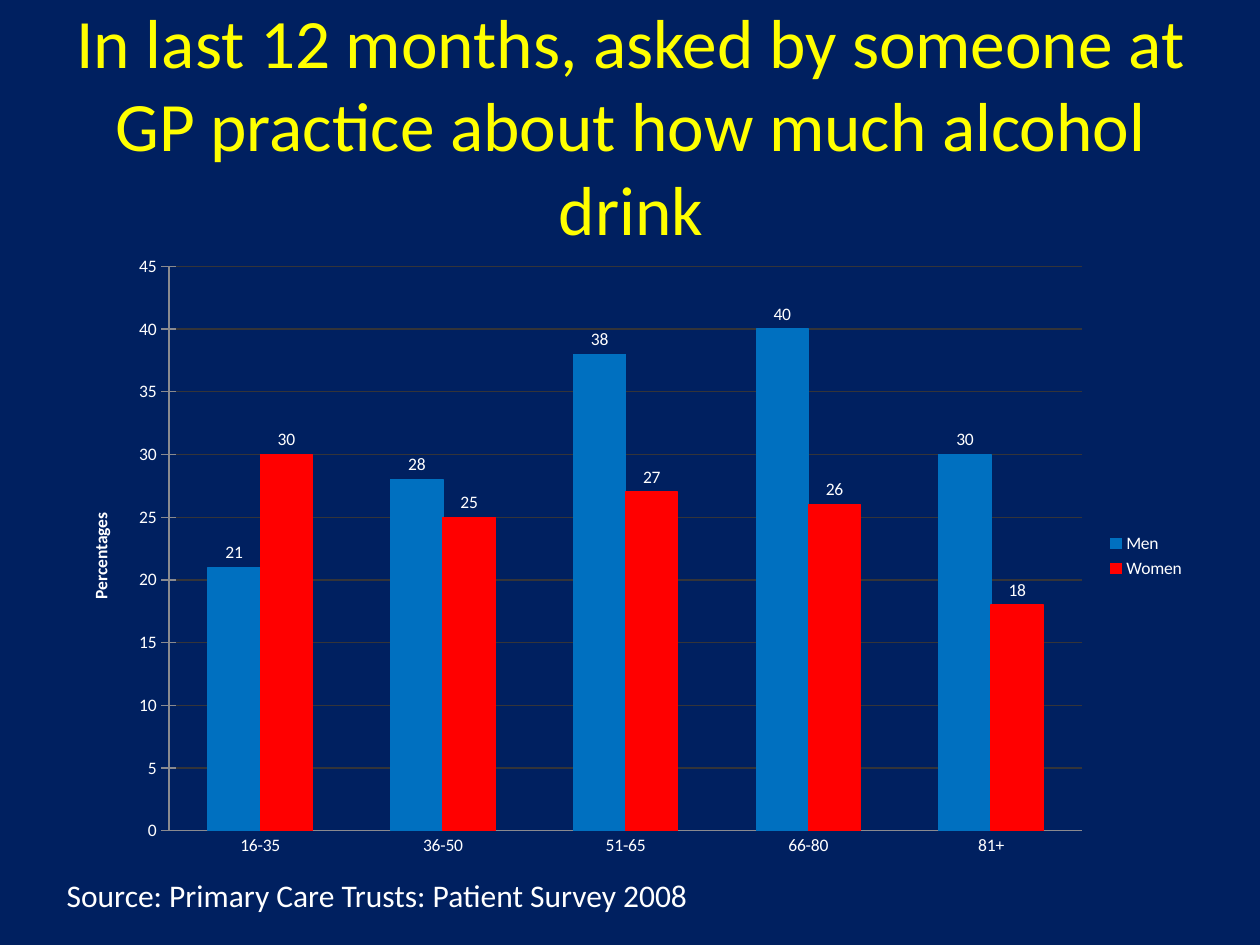
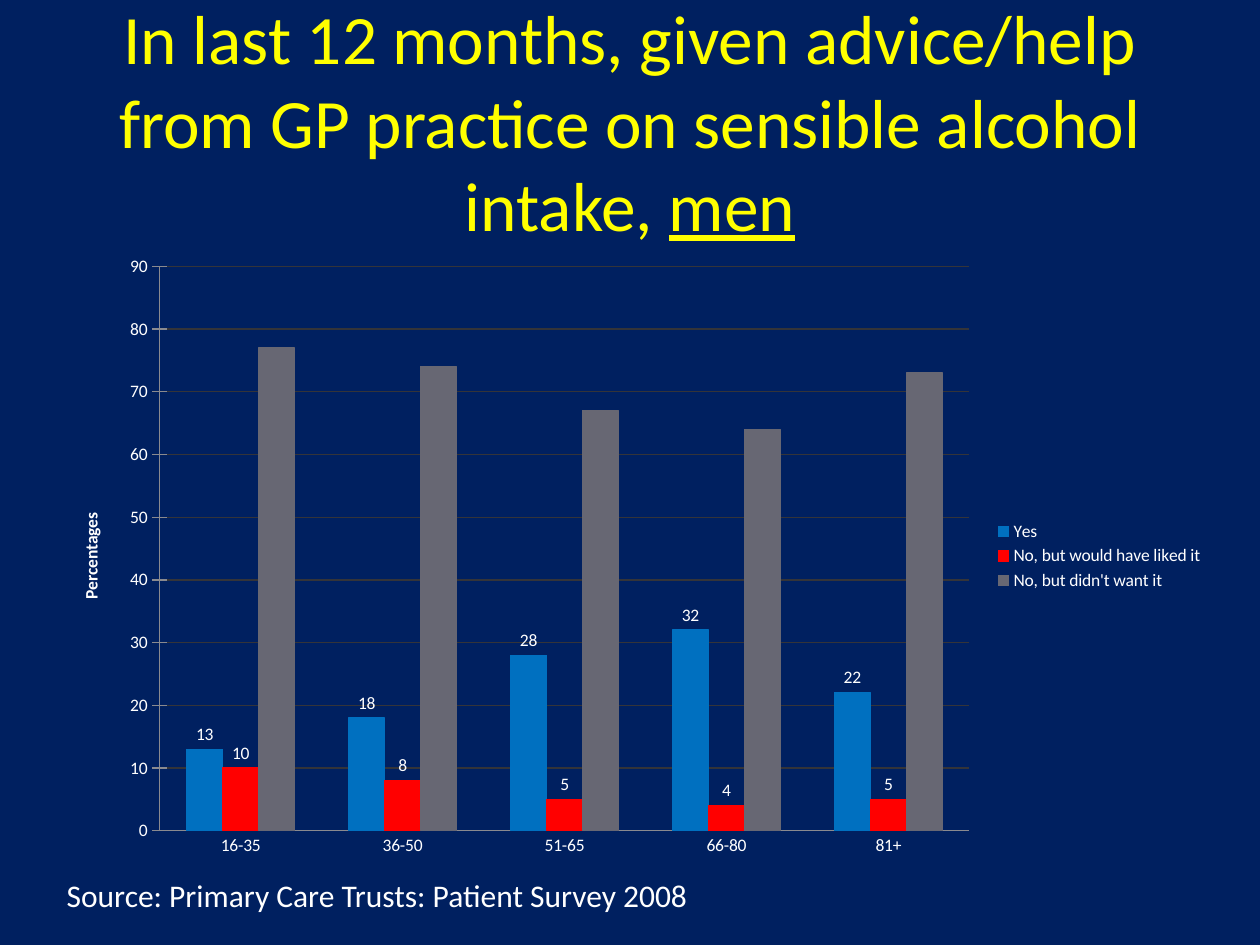
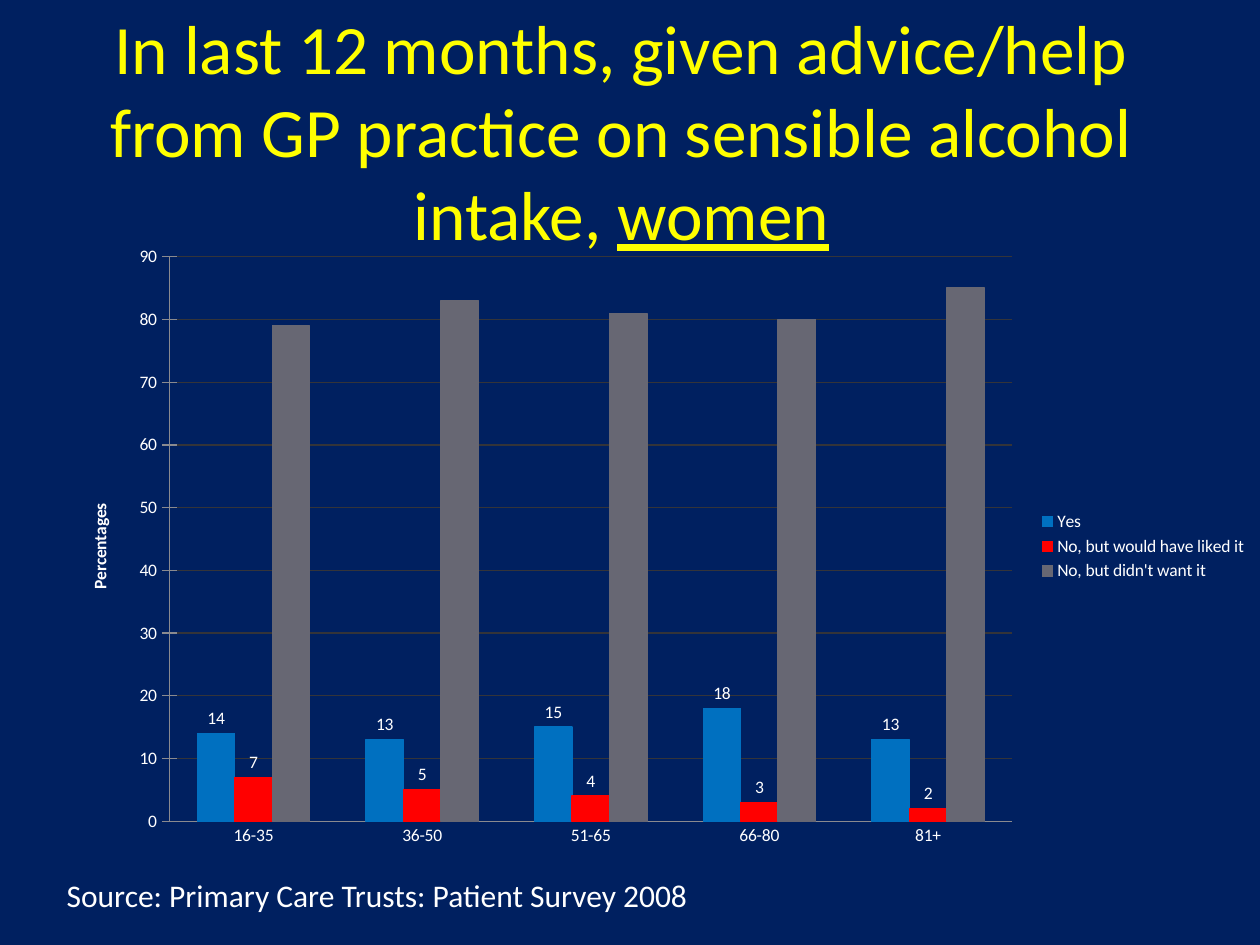
from pptx import Presentation
from pptx.chart.data import CategoryChartData
from pptx.dml.color import RGBColor
from pptx.enum.chart import XL_CHART_TYPE, XL_LABEL_POSITION, XL_LEGEND_POSITION, XL_TICK_MARK
from pptx.enum.text import MSO_ANCHOR, MSO_AUTO_SIZE, PP_ALIGN
from pptx.util import Pt

COLUMNS = XL_CHART_TYPE.COLUMN_CLUSTERED
ABOVE = XL_LABEL_POSITION.OUTSIDE_END
RIGHT = XL_LEGEND_POSITION.RIGHT
NO_TICK, CROSS = XL_TICK_MARK.NONE, XL_TICK_MARK.CROSS
MIDDLE = MSO_ANCHOR.MIDDLE
NO_FIT, GROW = MSO_AUTO_SIZE.NONE, MSO_AUTO_SIZE.SHAPE_TO_FIT_TEXT
CENTER = PP_ALIGN.CENTER

FONT = "Calibri"
COLORS = {
    "back": "002060", "title": "FFFF00", "text": "FFFFFF",
    "grid": "343439", "axis": "8A8A8F",
    "blue": "0070C0", "red": "FF0000", "gray": "676773",
}
BARS = ["blue", "red", "gray"]
AGES = ["16-35", "36-50", "51-65", "66-80", "81+"]
REPLIES = ["Yes", "No, but would have liked it", "No, but didn't want it"]
SOURCE = "Source: Primary Care Trusts: Patient Survey 2008"
SOURCE_BOX = (31, 496.8, 373.7, 28.8)
ADVICE = "In last 12 months, given advice/help from GP practice on sensible alcohol intake, "

SLIDES = [
    {
        "title": ["In last 12 months, asked by someone at GP practice about how much alcohol drink"],
        "title_box": (36.5, 26, 648, 90),
        "chart_box": (36.5, 139.5, 648, 356.5),
        "series": {"Men": [21, 28, 38, 40, 30], "Women": [30, 25, 27, 26, 18]},
    },
    {
        "title": [ADVICE, "men"],
        "title_box": (36, 26, 648, 85.5),
        "chart_box": (31, 139.5, 664, 356.5),
        "series": dict(zip(REPLIES, [
            [13, 18, 28, 32, 22], [10, 8, 5, 4, 5], [77, 74, 67, 64, 73]])),
    },
    {
        "title": [ADVICE, "women"],
        "title_box": (31, 31.5, 648, 85.5),
        "chart_box": (36, 134, 684, 356.5),
        "series": dict(zip(REPLIES, [
            [14, 13, 15, 18, 13], [7, 5, 4, 3, 2], [79, 83, 81, 80, 85]])),
    },
]


def color(name):
    return RGBColor.from_string(COLORS[name])


def style(font, size, name, bold=False):
    font.name = FONT
    font.size = Pt(size)
    font.bold = bold
    font.color.rgb = color(name)


def rule(line, name):
    line.color.rgb = color(name)
    line.width = Pt(0.75)


def add_title(slide, box, parts):
    title = slide.shapes.title
    title.left, title.top, title.width, title.height = map(Pt, box)
    frame = title.text_frame
    frame.auto_size = NO_FIT
    frame.word_wrap = True
    frame.vertical_anchor = MIDDLE
    para = frame.paragraphs[0]
    para.alignment = CENTER
    for index, part in enumerate(parts):
        run = para.add_run()
        run.text = part
        style(run.font, 39.6, "title")
        if index:
            run.font.underline = True


def add_source(slide, box):
    frame = slide.shapes.add_textbox(*map(Pt, box)).text_frame
    frame.word_wrap = False
    frame.auto_size = GROW
    run = frame.paragraphs[0].add_run()
    run.text = SOURCE
    style(run.font, 18, "text")


def style_axes(chart):
    ages, values = chart.category_axis, chart.value_axis
    for axis in (ages, values):
        rule(axis.format.line, "axis")
        axis.minor_tick_mark = NO_TICK
    ages.major_tick_mark = NO_TICK
    values.major_tick_mark = CROSS
    values.has_major_gridlines = True
    rule(values.major_gridlines.format.line, "grid")
    run = values.axis_title.text_frame.paragraphs[0].add_run()
    run.text = "Percentages"
    style(run.font, 10, "text", True)


def add_bars(slide, box, series):
    data = CategoryChartData()
    data.categories = AGES
    for name, values in series.items():
        data.add_series(name, values)
    chart = slide.shapes.add_chart(COLUMNS, *map(Pt, box), data).chart
    style(chart.font, 10, "text")
    chart.has_title = False
    chart.has_legend = True
    chart.legend.position = RIGHT
    chart.legend.include_in_layout = False
    style_axes(chart)
    plot = chart.plots[0]
    plot.gap_width = 150
    plot.overlap = 0
    plot.vary_by_categories = False
    for bar, name in zip(plot.series, BARS):
        bar.format.fill.solid()
        bar.format.fill.fore_color.rgb = color(name)
        rule(bar.format.line, name)
        if name != "gray":
            labels = bar.data_labels
            labels.show_value = True
            labels.position = ABOVE
            style(labels.font, 10, "text")


def add_slide(deck, page):
    slide = deck.slides.add_slide(deck.slide_layouts[5])
    add_title(slide, page["title_box"], page["title"])
    add_bars(slide, page["chart_box"], page["series"])
    add_source(slide, SOURCE_BOX)


def main():
    deck = Presentation()
    deck.slide_width, deck.slide_height = Pt(720), Pt(540)
    fill = deck.slide_master.background.fill
    fill.solid()
    fill.fore_color.rgb = color("back")
    for page in SLIDES:
        add_slide(deck, page)
    deck.save("out.pptx")


if __name__ == "__main__":
    main()
